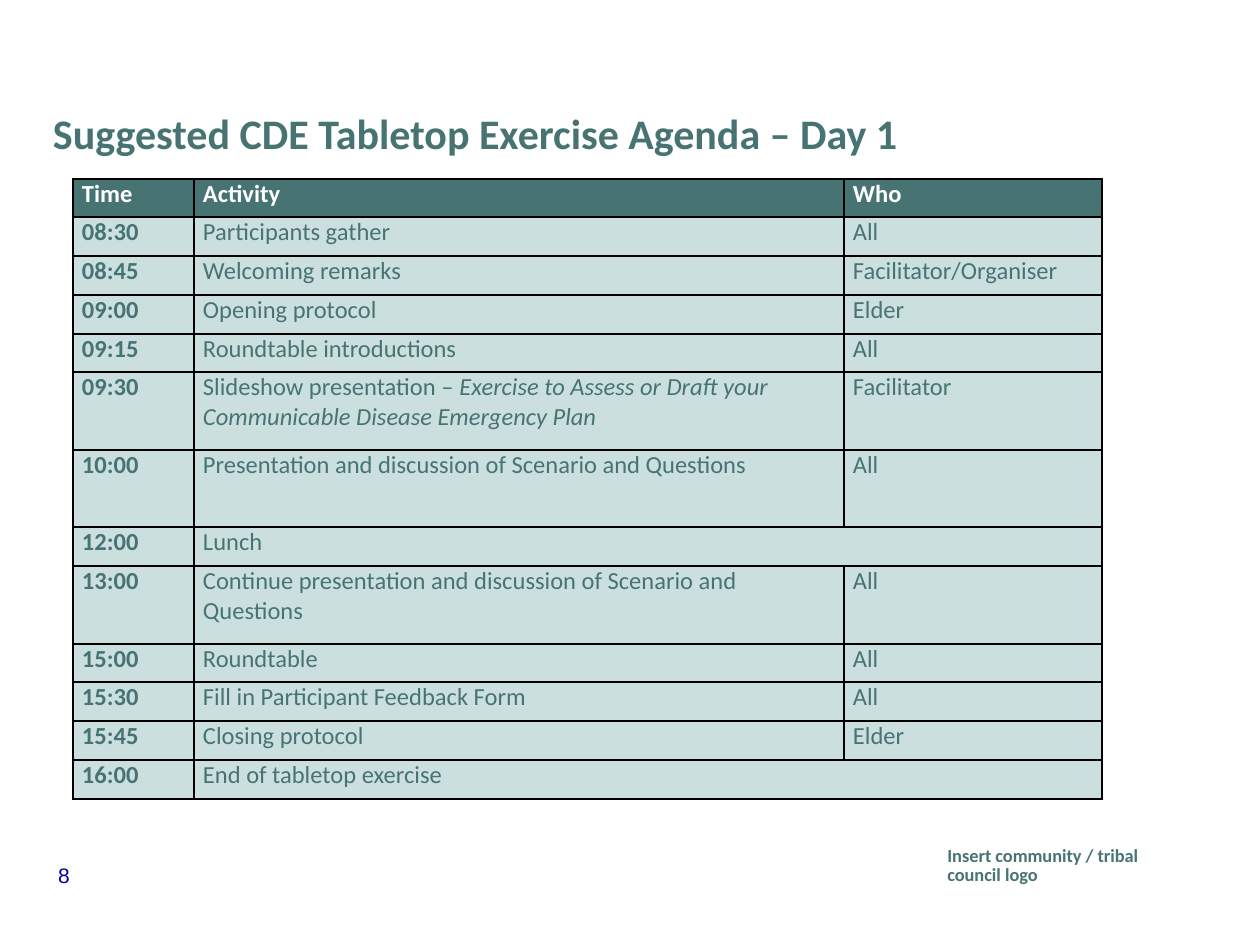
from lxml.etree import SubElement
from pptx import Presentation
from pptx.dml.color import RGBColor
from pptx.enum.text import PP_ALIGN as Align
from pptx.oxml.ns import qn
from pptx.util import Pt

PX = 914400 // 126  # EMU per pixel

TEAL = RGBColor(0x47, 0x73, 0x73)
PALE = RGBColor(0xCC, 0xDF, 0xDF)
WHITE = RGBColor(0xFF, 0xFF, 0xFF)
NAVY = RGBColor(0x00, 0x00, 0xA3)
BLACK = RGBColor(0x00, 0x00, 0x00)

HEADER = ("Time", "Activity", "Who")
PRESENTATION = "Slideshow presentation – "
PLAN = "Exercise to Assess or Draft your Communicable Disease Emergency Plan"
# Row height in units, time, activity runs (the second is italic), who (None: merged)
AGENDA = [
    (1, "08:30", ["Participants gather"], "All"),
    (1, "08:45", ["Welcoming remarks"], "Facilitator/Organiser"),
    (1, "09:00", ["Opening protocol"], "Elder"),
    (1, "09:15", ["Roundtable introductions"], "All"),
    (2, "09:30", [PRESENTATION, PLAN], "Facilitator"),
    (2, "10:00", ["Presentation and discussion of Scenario and Questions"], "All"),
    (1, "12:00", ["Lunch"], None),
    (2, "13:00", ["Continue presentation and discussion of Scenario and Questions"], "All"),
    (1, "15:00", ["Roundtable"], "All"),
    (1, "15:30", ["Fill in Participant Feedback Form"], "All"),
    (1, "15:45", ["Closing protocol"], "Elder"),
    (1, "16:00", ["End of tabletop exercise"], None),
]


class SlideBuilder:
    font = "Calibri"

    def __init__(self, slide):
        self.slide = slide

    def style(self, font, size, color, bold=False, name=None):
        font.name = name or self.font
        font.size = Pt(size)
        font.bold = bold
        font.color.rgb = color

    def text(self, box, words, size, color, bold=False, name=None,
             align=Align.LEFT, spacing=0.9, inset=None):
        frame = self.slide.shapes.add_textbox(*(v * PX for v in box)).text_frame
        frame.word_wrap = True
        if inset is not None:
            frame.margin_left = frame.margin_right = inset * PX
            frame.margin_top = frame.margin_bottom = inset * PX
        frame.text = words
        paragraph = frame.paragraphs[0]
        paragraph.alignment = align
        paragraph.line_spacing = spacing
        self.style(paragraph.runs[0].font, size, color, bold, name)

    def table(self, box, widths, heights):
        table = self.slide.shapes.add_table(
            len(heights), len(widths), *(v * PX for v in box)).table
        for column, width in zip(table.columns, widths):
            column.width = width * PX
        for row, height in zip(table.rows, heights):
            row.height = height * PX
        return table

    def cell(self, cell, runs, fill, color, bold=False):
        cell.margin_left = cell.margin_right = 9 * PX
        cell.margin_top = cell.margin_bottom = 0
        paragraph = cell.text_frame.paragraphs[0]
        for index, words in enumerate(runs):
            run = paragraph.add_run()
            run.text = words
            self.style(run.font, 14, color, bold)
            run.font.italic = index > 0
        self.borders(cell)
        cell.fill.solid()
        cell.fill.fore_color.rgb = fill

    def borders(self, cell):
        properties = cell._tc.get_or_add_tcPr()
        for side in ("a:lnL", "a:lnR", "a:lnT", "a:lnB"):
            line = SubElement(properties, qn(side), w=str(Pt(1)))
            solid = SubElement(line, qn("a:solidFill"))
            SubElement(solid, qn("a:srgbClr"), val=str(BLACK))


def main():
    presentation = Presentation()
    presentation.slide_width = 1260 * PX
    presentation.slide_height = 945 * PX
    builder = SlideBuilder(presentation.slides.add_slide(presentation.slide_layouts[6]))

    # Page number and title
    builder.text((5, 859, 118, 38), "8", 12, NAVY, name="Arial", align=Align.CENTER)
    builder.text((53, 116, 1081, 42), "Suggested CDE Tabletop Exercise Agenda – Day 1",
                 24, TEAL, bold=True, spacing=Pt(24), inset=0)

    # Logo note
    builder.text((935, 840, 272, 53), "Insert community / tribal council logo",
                 10.5, TEAL, bold=True)

    # Agenda: row edges share the table height evenly by unit
    height = 620
    units = [1] + [row[0] for row in AGENDA]
    edges = [height * sum(units[:i]) // sum(units) for i in range(len(units) + 1)]
    heights = [low - high for high, low in zip(edges, edges[1:])]
    agenda = builder.table((73, 179, 1029, height), (121, 650, 258), heights)

    for column, heading in enumerate(HEADER):
        builder.cell(agenda.cell(0, column), [heading], TEAL, WHITE, bold=True)
    for row, (_, time, activity, who) in enumerate(AGENDA, start=1):
        builder.cell(agenda.cell(row, 0), [time], PALE, TEAL, bold=True)
        builder.cell(agenda.cell(row, 1), activity, PALE, TEAL)
        builder.cell(agenda.cell(row, 2), [who] if who else [], PALE, TEAL)
        if who is None:
            agenda.cell(row, 1).merge(agenda.cell(row, 2))

    presentation.save("out.pptx")


if __name__ == "__main__":
    main()
